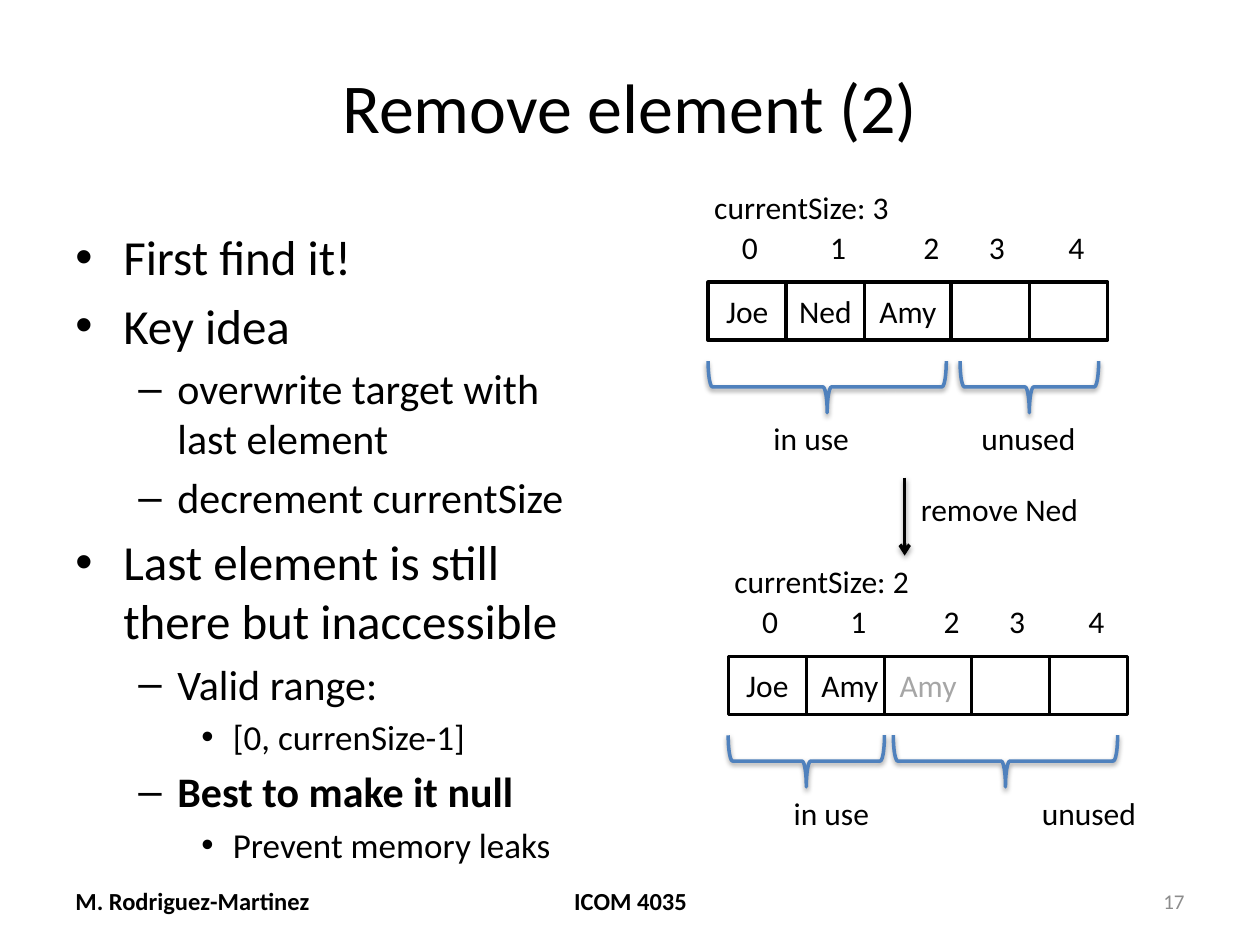
from lxml import etree
from pptx import Presentation
from pptx import util as u
from pptx.dml.color import RGBColor
from pptx.enum import shapes, text
from pptx.oxml import parse_xml
from pptx.oxml.ns import nsdecls, qn

theme = dict(font="Calibri", ink="000000", paper="FFFFFF", blue="4F81BD",
             gray="8C8C8C", pale="A6A6A6", line=2,
             title=40, label=18, foot=14, page=12, body=(28, 24, 20))
left, mid, right = text.PP_ALIGN.LEFT, text.PP_ALIGN.CENTER, text.PP_ALIGN.RIGHT

deck = Presentation()
deck.slide_width, deck.slide_height = u.Inches(10), u.Inches(7.5)
col, row = deck.slide_width / 100, deck.slide_height / 75
slide = deck.slides.add_slide(deck.slide_layouts[5])
items = slide.shapes


def grid(x, y, w, h):
    return round(x * col), round(y * row), round(w * col), round(h * row)


def write(frame, words, size=theme["label"], color=theme["ink"], bold=False,
          align=left, anchor=text.MSO_ANCHOR.TOP, wrap=False, more=False):
    frame.word_wrap = wrap
    frame.vertical_anchor = anchor
    para = frame.add_paragraph() if more else frame.paragraphs[0]
    para.alignment = align
    run = para.add_run()
    run.text = words
    run.font.name, run.font.size, run.font.bold = theme["font"], u.Pt(size), bold
    run.font.color.rgb = RGBColor.from_string(color)
    return para


shadow = f"""<a:effectLst {nsdecls('a')}>
<a:outerShdw blurRad="{u.Pt(3.1)}" dist="{u.Pt(1.6)}" dir="5400000" rotWithShape="0">
<a:srgbClr val="{theme['ink']}"><a:alpha val="38000"/></a:srgbClr>
</a:outerShdw></a:effectLst>"""

title = items.title
title.left, title.top, title.width, title.height = grid(5, 3, 90, 10.7)
write(title.text_frame, "Remove element (2)", size=theme["title"], align=mid,
      anchor=text.MSO_ANCHOR.MIDDLE, wrap=True)

points = [
    (0, "First find it!"),
    (0, "Key idea"),
    (1, "overwrite target with last element"),
    (1, "decrement currentSize"),
    (0, "Last element is still there but inaccessible"),
    (1, "Valid range:"),
    (2, "[0, currenSize-1]"),
    (1, "Best to make it null"),
    (2, "Prevent memory leaks"),
]
marks = [("•", 0.38, 0.38), ("–", 0.81, 0.31), ("•", 1.25, 0.25)]
body = items.add_textbox(*grid(5, 17.5, 44.2, 49.5)).text_frame
for n, (level, words) in enumerate(points):
    size = theme["body"][level]
    para = write(body, words, size=size, bold=words.startswith("Best"),
                 wrap=True, more=n > 0)
    para.level = level
    para.space_before = u.Pt(size * 0.2)
    mark, edge, hang = marks[level]
    props = para._p.get_or_add_pPr()
    props.set("marL", str(u.Inches(edge)))
    props.set("indent", str(-u.Inches(hang)))
    etree.SubElement(props, qn("a:buFont")).set("typeface", "Arial")
    etree.SubElement(props, qn("a:buChar")).set("char", mark)

feet = [
    (5, 23.3, "M. Rodriguez-Martinez", left, theme["foot"], theme["ink"], True),
    (34.2, 31.7, "ICOM 4035", mid, theme["foot"], theme["ink"], True),
    (71.7, 23.3, "17", right, theme["page"], theme["gray"], False),
]
for x, w, words, align, size, color, bold in feet:
    foot = items.add_textbox(*grid(x, 69.5, w, 4))
    write(foot.text_frame, words, size=size, color=color, bold=bold,
          align=align, anchor=text.MSO_ANCHOR.MIDDLE, wrap=True)

starts = [0, 6.2, 12.4, 19.3, 25.5]
stops = [7, 14.4, 19.6, 25.9]
states = [
    dict(x=56.2, y=22.4, count="3", names=["Joe", "Ned", "Amy", "", ""],
         wide=[6.2, 6.2, 6.9, 6.2, 6.2], old=None,
         spans=[(0, 18.9, "in use", 4.2, 8.1), (20, 11, "unused", 20.7, 9.6)]),
    dict(x=57.8, y=52.1, count="2", names=["Joe", "Amy", "Amy", "", ""],
         wide=[6.2, 6.9, 6.9, 7, 6.2], old=2,
         spans=[(0, 12.4, "in use", 4.2, 8.1), (13.1, 17.8, "unused", 23.9, 9.6)]),
]
for state in states:
    x, y = state["x"], state["y"]
    for n, name in enumerate(state["names"]):
        cell = items.add_shape(shapes.MSO_SHAPE.RECTANGLE,
                               *grid(x + starts[n], y, state["wide"][n], 4.6))
        cell.shadow.inherit = False
        cell.fill.solid()
        cell.fill.fore_color.rgb = RGBColor.from_string(theme["paper"])
        cell.line.color.rgb = RGBColor.from_string(theme["ink"])
        cell.line.width = u.Pt(theme["line"])
        if name:
            write(cell.text_frame, name, align=mid, anchor=text.MSO_ANCHOR.MIDDLE,
                  color=theme["pale"] if n == state["old"] else theme["ink"])

    index = items.add_textbox(*grid(x + 1.7, y - 4.8, 29.5, 4))
    para = write(index.text_frame, "0\t1\t2\t3\t4", wrap=True)
    tabs = etree.SubElement(para._p.get_or_add_pPr(), qn("a:tabLst"))
    for stop in stops:
        etree.SubElement(tabs, qn("a:tab"), pos=str(round(stop * col)), algn="l")

    for start, span, words, edge, w in state["spans"]:
        brace = items.add_shape(
            shapes.MSO_SHAPE.LEFT_BRACE,
            *grid(x + start + span / 2 - 2.05, y + 8.3 - span / 2, 4.1, span))
        brace.rotation = 270
        brace.fill.background()
        brace.line.color.rgb = RGBColor.from_string(theme["blue"])
        brace.line.width = u.Pt(theme["line"])
        brace._element.spPr.append(parse_xml(shadow))
        label = items.add_textbox(*grid(x + edge, y + 10.4, w, 4))
        write(label.text_frame, words)

    head = items.add_textbox(*grid(x - 0.5, y - 8, 16.1, 4))
    write(head.text_frame, "currentSize: " + state["count"])

x, top, low, _ = grid(71.8, 37.9, 44.1, 0)
low = round(44.1 * row)
arrow = items.add_connector(shapes.MSO_CONNECTOR.STRAIGHT, x, top, x, low)
arrow.line.color.rgb = RGBColor.from_string(theme["ink"])
arrow.line.width = u.Pt(theme["line"])
etree.SubElement(arrow.line._get_or_add_ln(), qn("a:tailEnd")).set("type", "arrow")
arrow._element.spPr.append(parse_xml(shadow))
step = items.add_textbox(*grid(72.1, 38.4, 14.7, 4))
write(step.text_frame, "remove Ned")

deck.save("out.pptx")
